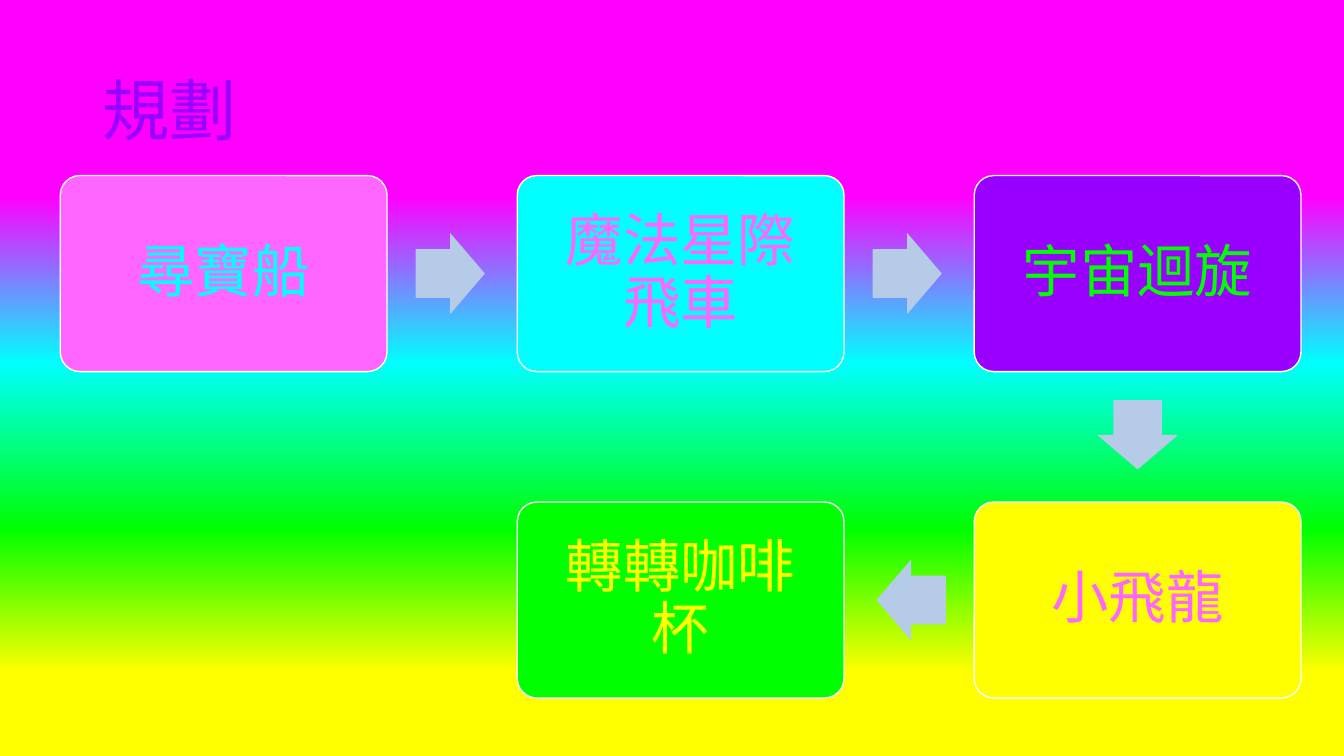
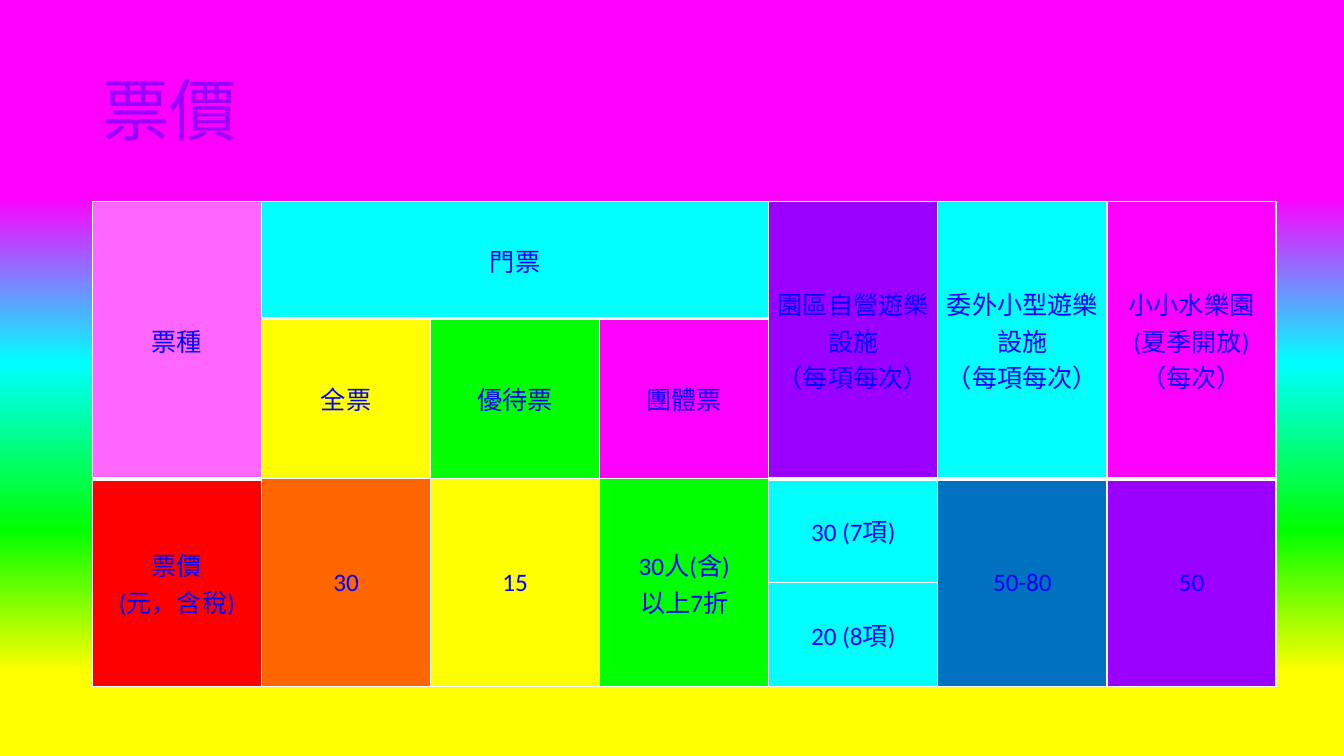
"""Build an amusement park ride plan and its ticket price table."""
import math
from dataclasses import dataclass
from itertools import pairwise

from lxml import etree
from pptx import Presentation
from pptx.dml.color import RGBColor
from pptx.enum import shapes, text
from pptx.oxml.ns import qn
from pptx.util import Pt


@dataclass(frozen=True)
class Theme:
    pink: str = "FF66FF"
    magenta: str = "FF00FF"
    cyan: str = "00FFFF"
    green: str = "00FF00"
    yellow: str = "FFFF00"
    purple: str = "9900FF"
    red: str = "FF0000"
    orange: str = "FF6600"
    blue: str = "0070C0"
    ink: str = "0000FF"
    arrow: str = "B5CBE7"
    white: str = "FFFFFF"
    cjk: str = "Noto Sans CJK JP"
    latin: str = "Calibri"
    title_size: int = 48
    ride_size: int = 41
    cell_size: int = 18


theme = Theme()


def write(frame, words, size, font, color, align, inset):
    """Fill a text frame with one vertically centred paragraph."""
    frame.word_wrap = True
    frame.vertical_anchor = text.MSO_ANCHOR.MIDDLE
    frame.margin_left = frame.margin_right = Pt(inset)
    frame.margin_top = frame.margin_bottom = Pt(inset)
    para = frame.paragraphs[0]
    para.text = words
    para.alignment = align
    para.font.size = Pt(size)
    para.font.name = font
    para.font.color.rgb = RGBColor.from_string(color)
    return para


def add_page(title):
    """Add a blank page with its title."""
    page = deck.slides.add_slide(deck.slide_layouts[6])
    box = page.shapes.add_textbox(Pt(66), Pt(28.8), Pt(828), Pt(104.4))
    para = write(box.text_frame, title, theme.title_size, theme.cjk,
                 theme.purple, text.PP_ALIGN.LEFT, 7.2)
    para.line_spacing = 0.9
    return page


deck = Presentation()
deck.slide_width, deck.slide_height = Pt(960), Pt(540)

master = deck.slide_master
backdrop = master.background.fill
backdrop.gradient()
backdrop.gradient_angle = 270
stops = master.element.find(".//" + qn("a:gsLst"))
for stop in list(stops):
    stops.remove(stop)
for percent, color in ((26, theme.magenta), (48, theme.cyan),
                       (70, theme.green), (89, theme.yellow)):
    stop = etree.SubElement(stops, qn("a:gs"), pos=str(percent * 1000))
    etree.SubElement(stop, qn("a:srgbClr"), val=color)

page = add_page("規劃")
box_width, box_height = 233.4, 140
first_x, first_y = 159.8, 195.4
step_x, step_y = 326.4, 233.2
rides = [
    ("尋寶船", 0, 0, theme.pink, theme.cyan),
    ("魔法星際飛車", 1, 0, theme.cyan, theme.pink),
    ("宇宙迴旋", 2, 0, theme.purple, theme.green),
    ("小飛龍", 2, 1, theme.yellow, theme.pink),
    ("轉轉咖啡杯", 1, 1, theme.green, theme.yellow),
]
centers = []
for name, column, row, fill, color in rides:
    x, y = first_x + column * step_x, first_y + row * step_y
    centers.append((x, y))
    box = page.shapes.add_shape(
        shapes.MSO_SHAPE.ROUNDED_RECTANGLE, Pt(x - box_width / 2),
        Pt(y - box_height / 2), Pt(box_width), Pt(box_height))
    box.adjustments[0] = 0.1
    box.shadow.inherit = False
    box.fill.solid()
    box.fill.fore_color.rgb = RGBColor.from_string(fill)
    box.line.color.rgb = RGBColor.from_string(theme.white)
    box.line.width = Pt(1)
    para = write(box.text_frame, name, theme.ride_size, theme.cjk, color,
                 text.PP_ALIGN.CENTER, 12)
    para.line_spacing = 0.9

arrow_width, arrow_height, pull_back = 49.5, 57.9, 1.4
for (x1, y1), (x2, y2) in pairwise(centers):
    angle = math.atan2(y2 - y1, x2 - x1)
    x = (x1 + x2) / 2 - pull_back * math.cos(angle)
    y = (y1 + y2) / 2 - pull_back * math.sin(angle)
    arrow = page.shapes.add_shape(
        shapes.MSO_SHAPE.RIGHT_ARROW, Pt(x - arrow_width / 2),
        Pt(y - arrow_height / 2), Pt(arrow_width), Pt(arrow_height))
    arrow.adjustments[0] = 0.6
    arrow.adjustments[1] = 0.5
    arrow.rotation = math.degrees(angle)
    arrow.shadow.inherit = False
    arrow.fill.solid()
    arrow.fill.fore_color.rgb = RGBColor.from_string(theme.arrow)
    arrow.line.fill.background()

page = add_page("票價")
row_heights = [83.5, 114.5, 74.3, 74.3]
column_count, column_width = 7, 120.8
table = page.shapes.add_table(
    len(row_heights), column_count, Pt(66), Pt(144),
    Pt(column_count * column_width), Pt(sum(row_heights))).table
table.first_row = table.horz_banding = False
for column in table.columns:
    column.width = Pt(column_width)
for row, height in zip(table.rows, row_heights):
    row.height = Pt(height)

for index, row in enumerate(table.rows):
    for cell in row.cells:
        properties = cell._tc.get_or_add_tcPr()
        for side in "LRTB":
            weight = 3 if index == 0 and side == "B" else 1
            line = etree.SubElement(properties, qn(f"a:ln{side}"), w=str(Pt(weight)))
            paint = etree.SubElement(line, qn("a:solidFill"))
            etree.SubElement(paint, qn("a:srgbClr"), val=theme.white)

tickets = [
    (0, 0, 2, 1, "票種", theme.pink),
    (0, 1, 1, 3, "門票", theme.cyan),
    (0, 4, 2, 1, "園區自營遊樂設施\v（每項每次）", theme.purple),
    (0, 5, 2, 1, "委外小型遊樂設施\v（每項每次）", theme.cyan),
    (0, 6, 2, 1, "小小水樂園\v(夏季開放)\v（每次）", theme.magenta),
    (1, 1, 1, 1, "全票", theme.yellow),
    (1, 2, 1, 1, "優待票", theme.green),
    (1, 3, 1, 1, "團體票", theme.magenta),
    (2, 0, 2, 1, "票價\v(元，含稅)", theme.red),
    (2, 1, 2, 1, "30", theme.orange),
    (2, 2, 2, 1, "15", theme.yellow),
    (2, 3, 2, 1, "30人(含)\v以上7折", theme.green),
    (2, 4, 1, 1, "30 (7項)", theme.cyan),
    (2, 5, 2, 1, "50-80", theme.blue),
    (2, 6, 2, 1, "50", theme.purple),
    (3, 4, 1, 1, "20 (8項)", theme.cyan),
]
for row, column, height, width, words, fill in tickets:
    cell = table.cell(row, column)
    if height * width > 1:
        cell.merge(table.cell(row + height - 1, column + width - 1))
    cell.fill.solid()
    cell.fill.fore_color.rgb = RGBColor.from_string(fill)
    cell.vertical_anchor = text.MSO_ANCHOR.MIDDLE
    cell.margin_left = cell.margin_right = Pt(2.2)
    cell.margin_top = cell.margin_bottom = Pt(2.2)
    para = cell.text_frame.paragraphs[0]
    para.text = words
    para.alignment = text.PP_ALIGN.CENTER
    para.font.size = Pt(theme.cell_size)
    para.font.name = theme.latin
    para.font.color.rgb = RGBColor.from_string(theme.ink)

deck.save("out.pptx")
